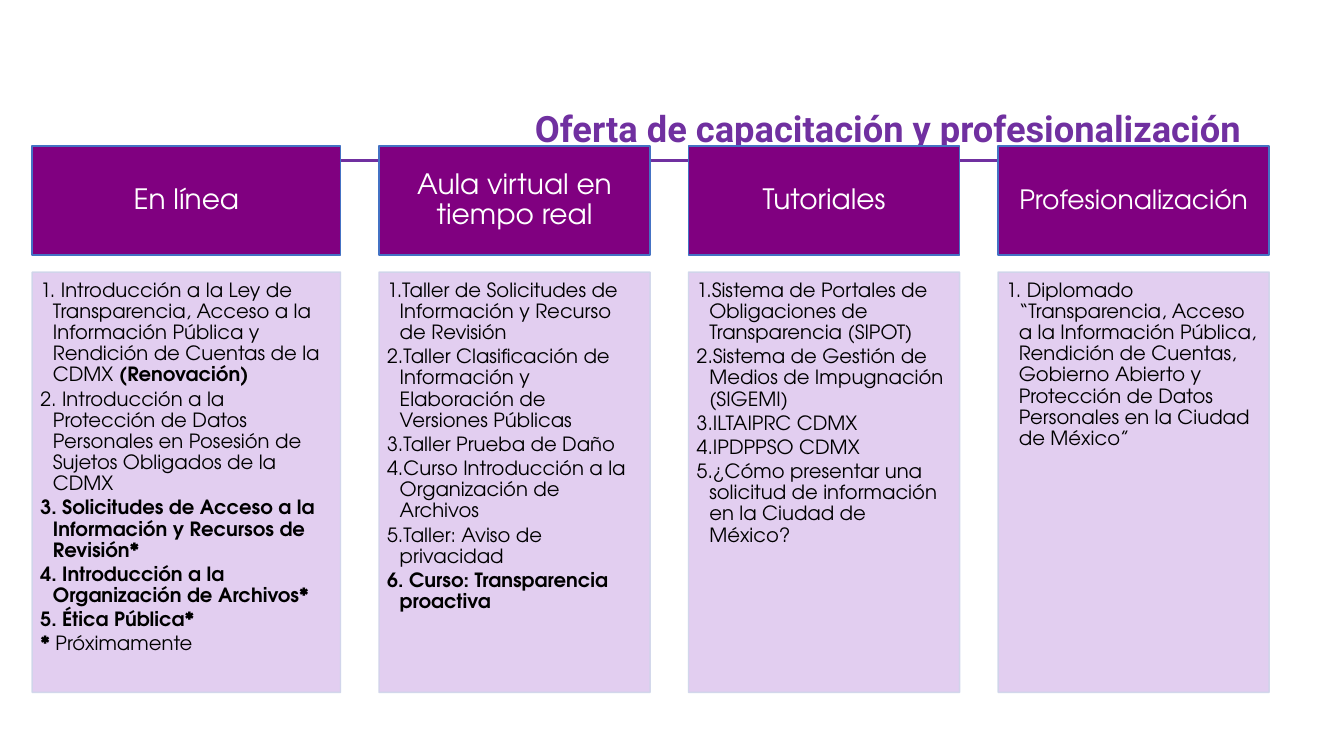
from lxml.etree import SubElement
from pptx import Presentation
from pptx.dml.color import RGBColor
from pptx.enum.shapes import MSO_CONNECTOR, MSO_SHAPE
from pptx.enum.text import MSO_ANCHOR, PP_ALIGN
from pptx.oxml.ns import qn
from pptx.util import Pt

VIOLET = RGBColor(0x70, 0x30, 0xA0)
PURPLE = RGBColor(0x80, 0x00, 0x80)
LILAC = RGBColor(0xDF, 0xC9, 0xEF)
BLUE = RGBColor(0x44, 0x72, 0xC4)
PALE = RGBColor(0xCF, 0xD5, 0xEA)
WHITE = RGBColor(0xFF, 0xFF, 0xFF)
BLACK = RGBColor(0x00, 0x00, 0x00)
ADVENTOR = "TeX Gyre Adventor"


def write(shape, items, size, color, font=ADVENTOR, align=PP_ALIGN.CENTER,
          anchor=MSO_ANCHOR.TOP, inset=(7.2, 3.6, 7.2, 3.6), spacing=0.9,
          after=0, hang=0, numbered=False):
    frame = shape.text_frame
    frame.word_wrap = True
    frame.vertical_anchor = anchor
    (frame.margin_left, frame.margin_top,
     frame.margin_right, frame.margin_bottom) = map(Pt, inset)
    for index, runs in enumerate(items):
        para = frame.add_paragraph() if index else frame.paragraphs[0]
        para.alignment = align
        para.line_spacing = spacing
        para.space_after = Pt(after)
        if hang:
            props = para._p.get_or_add_pPr()
            props.set("marL", str(Pt(hang)))
            props.set("indent", str(Pt(-hang)))
            if numbered:
                SubElement(props, qn("a:buFont")).set("typeface", "+mj-lt")
                SubElement(props, qn("a:buAutoNum")).set("type", "arabicPeriod")
        for text, bold in runs:
            run = para.add_run()
            run.text = text
            run.font.name = font
            run.font.size = Pt(size)
            run.font.bold = bold
            run.font.color.rgb = color


def panel(left, top, width, height, fill, line, alpha=100):
    box = slide.shapes.add_shape(
        MSO_SHAPE.RECTANGLE, Pt(left), Pt(top), Pt(width), Pt(height))
    box.shadow.inherit = False
    box.fill.solid()
    box.fill.fore_color.rgb = fill
    box.line.color.rgb = line
    box.line.width = Pt(1)
    if alpha < 100:
        for tint in box._element.spPr.iter(qn("a:srgbClr")):
            SubElement(tint, qn("a:alpha")).set("val", str(alpha * 1000))
    return box


deck = Presentation()
deck.slide_width, deck.slide_height = Pt(960), Pt(540)
slide = deck.slides.add_slide(deck.slide_layouts[6])

rule = slide.shapes.add_connector(
    MSO_CONNECTOR.STRAIGHT, Pt(71.3), Pt(114.5), Pt(889.2), Pt(114.5))
rule.line.color.rgb = VIOLET
rule.line.width = Pt(2.25)
SubElement(rule._element.spPr, qn("a:effectLst"))

title = slide.shapes.add_textbox(Pt(347.8), Pt(80.6), Pt(573.1), Pt(29.5))
write(title, [[("Oferta de capacitación y profesionalización", True)]],
      25.9, VIOLET, font="Roboto", spacing=0.7)

columns = [
    ("En línea", 20, 220.3, False, [
        [("1. Introducción a la Ley de Transparencia, Acceso a la Información "
          "Pública y Rendición de Cuentas de la CDMX ", False),
         ("(Renovación)", True)],
        [("2. Introducción a la Protección de Datos Personales en Posesión de "
          "Sujetos Obligados de la CDMX", False)],
        [("3. Solicitudes de Acceso a la Información y Recursos de Revisión*", True)],
        [("4. Introducción a la Organización de Archivos*", True)],
        [("5. Ética Pública*", True)],
        [("* ", True), ("Próximamente", False)],
    ]),
    ("Aula virtual en tiempo real", 20, 193.7, True, [
        [("Taller de Solicitudes de Información y Recurso de Revisión", False)],
        [("Taller Clasificación de Información y Elaboración de Versiones "
          "Públicas", False)],
        [("Taller Prueba de Daño", False)],
        [("Curso Introducción a la Organización de Archivos", False)],
        [("Taller: Aviso de privacidad", False)],
        [(" Curso: Transparencia proactiva", True)],
    ]),
    ("Tutoriales", 20, 193.7, True, [
        [("Sistema de Portales de Obligaciones de Transparencia (SIPOT)", False)],
        [("Sistema de Gestión de Medios de Impugnación (SIGEMI)", False)],
        [("ILTAIPRC CDMX", False)],
        [("IPDPPSO CDMX", False)],
        [("¿Cómo presentar una solicitud de información en la Ciudad de "
          "México?", False)],
    ]),
    ("Profesionalización", 19, 193.7, True, [
        [(" Diplomado “Transparencia, Acceso a la Información Pública, "
          "Rendición de Cuentas, Gobierno Abierto y Protección de Datos "
          "Personales en la Ciudad de México”", False)],
    ]),
]

left, gap = 23, 27.4
for name, size, width, numbered, items in columns:
    head = panel(left, 104.4, width, 77.8, PURPLE, BLUE)
    write(head, [[(name, False)]], size, WHITE, anchor=MSO_ANCHOR.MIDDLE,
          inset=(11.5, 6.5, 11.5, 6.5), after=7)
    body = panel(left, 194.4, width, 300.2, LILAC, PALE, alpha=90)
    write(body, items, 14, BLACK, align=PP_ALIGN.LEFT,
          inset=(5.8, 5.8, 7.9, 8.6), after=2.1, hang=9, numbered=numbered)
    left += width + gap

deck.save("out.pptx")
